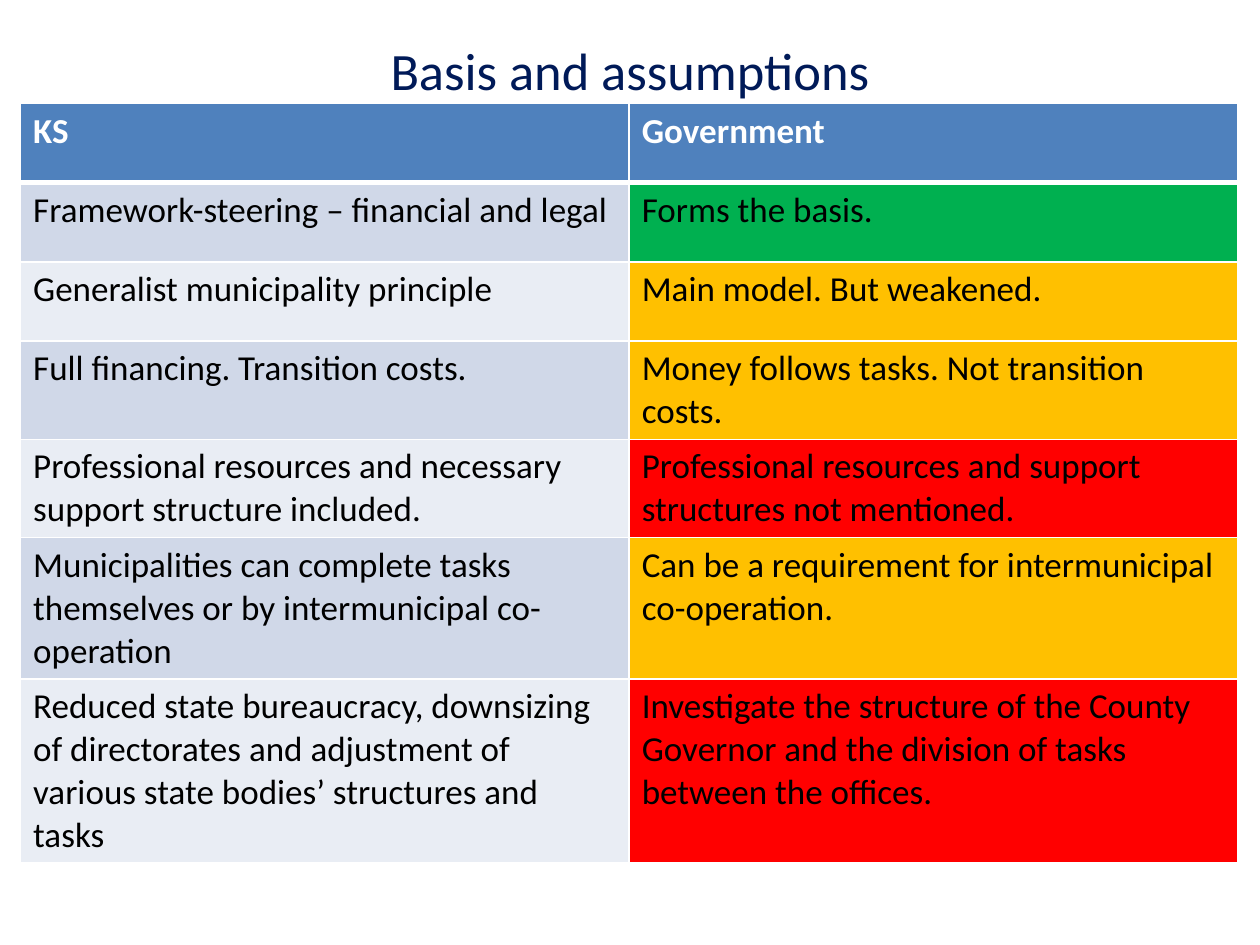
from lxml import etree
from pptx import Presentation
from pptx.dml.color import RGBColor
from pptx.enum.text import MSO_ANCHOR, PP_ALIGN
from pptx.oxml.ns import qn
from pptx.util import Pt

MIDDLE = MSO_ANCHOR.MIDDLE
CENTER = PP_ALIGN.CENTER

FONT = "Calibri"
NAVY = RGBColor(0x00, 0x1A, 0x58)
WHITE = RGBColor(0xFF, 0xFF, 0xFF)
BLACK = RGBColor(0x00, 0x00, 0x00)
HEADER_BLUE = RGBColor(0x4F, 0x81, 0xBD)
BAND_DARK = RGBColor(0xD0, 0xD8, 0xE8)
BAND_LIGHT = RGBColor(0xE9, 0xED, 0xF4)
GREEN = RGBColor(0x00, 0xB0, 0x50)
AMBER = RGBColor(0xFF, 0xC0, 0x00)
RED = RGBColor(0xFF, 0x00, 0x00)

COLUMN_WIDTH = Pt(347.8)
ROW_HEIGHT = Pt(45.2)

# KS position, government position, assessment colour
ROWS = [
    ("KS", "Government", HEADER_BLUE),
    ("Framework-steering – financial and legal", "Forms the basis.", GREEN),
    ("Generalist municipality principle", "Main model. But weakened.", AMBER),
    ("Full financing. Transition costs.",
     "Money follows tasks. Not transition costs.", AMBER),
    ("Professional resources and necessary support structure included.",
     "Professional resources and support structures not mentioned.", RED),
    ("Municipalities can complete tasks themselves or by intermunicipal co-operation",
     "Can be a requirement for intermunicipal co-operation.", AMBER),
    ("Reduced state bureaucracy, downsizing of directorates and adjustment of "
     "various state bodies’ structures and tasks",
     "Investigate the structure of the County Governor and the division of tasks "
     "between the offices.", RED),
]


def add_run(paragraph, text, size, color, bold=False):
    run = paragraph.add_run()
    run.text = text
    run.font.name = FONT
    run.font.size = Pt(size)
    run.font.bold = bold
    run.font.color.rgb = color


def add_border(cell, side, width):
    properties = cell._tc.get_or_add_tcPr()
    line = etree.SubElement(properties, qn(f"a:ln{side}"), w=str(Pt(width)))
    fill = etree.SubElement(line, qn("a:solidFill"))
    etree.SubElement(fill, qn("a:srgbClr"), val=str(WHITE))


presentation = Presentation()
presentation.slide_width = Pt(720)
presentation.slide_height = Pt(540)
slide = presentation.slides.add_slide(presentation.slide_layouts[5])

# Title
title = slide.shapes.title
title.left, title.top, title.width, title.height = Pt(36), Pt(-5), Pt(648), Pt(90)
title.text_frame.vertical_anchor = MIDDLE
title_paragraph = title.text_frame.paragraphs[0]
title_paragraph.alignment = CENTER
add_run(title_paragraph, "Basis and assumptions", 30, NAVY)

# Comparison table
table = slide.shapes.add_table(
    len(ROWS), 2, Pt(11.75), Pt(59.25), 2 * COLUMN_WIDTH, len(ROWS) * ROW_HEIGHT
).table
for column in table.columns:
    column.width = COLUMN_WIDTH

for row_index, (ks_text, government_text, assessment) in enumerate(ROWS):
    table.rows[row_index].height = ROW_HEIGHT
    is_header = row_index == 0
    band = BAND_DARK if row_index % 2 else BAND_LIGHT
    fills = (HEADER_BLUE if is_header else band, assessment)
    for column_index, text in enumerate((ks_text, government_text)):
        cell = table.cell(row_index, column_index)
        # Thicker rule between the header and the first body row
        add_border(cell, "L", 1)
        add_border(cell, "R", 1)
        add_border(cell, "T", 3 if row_index == 1 else 1)
        add_border(cell, "B", 3 if is_header else 1)
        cell.fill.solid()
        cell.fill.fore_color.rgb = fills[column_index]
        add_run(cell.text_frame.paragraphs[0], text, 20,
                WHITE if is_header else BLACK, is_header)

presentation.save("out.pptx")
